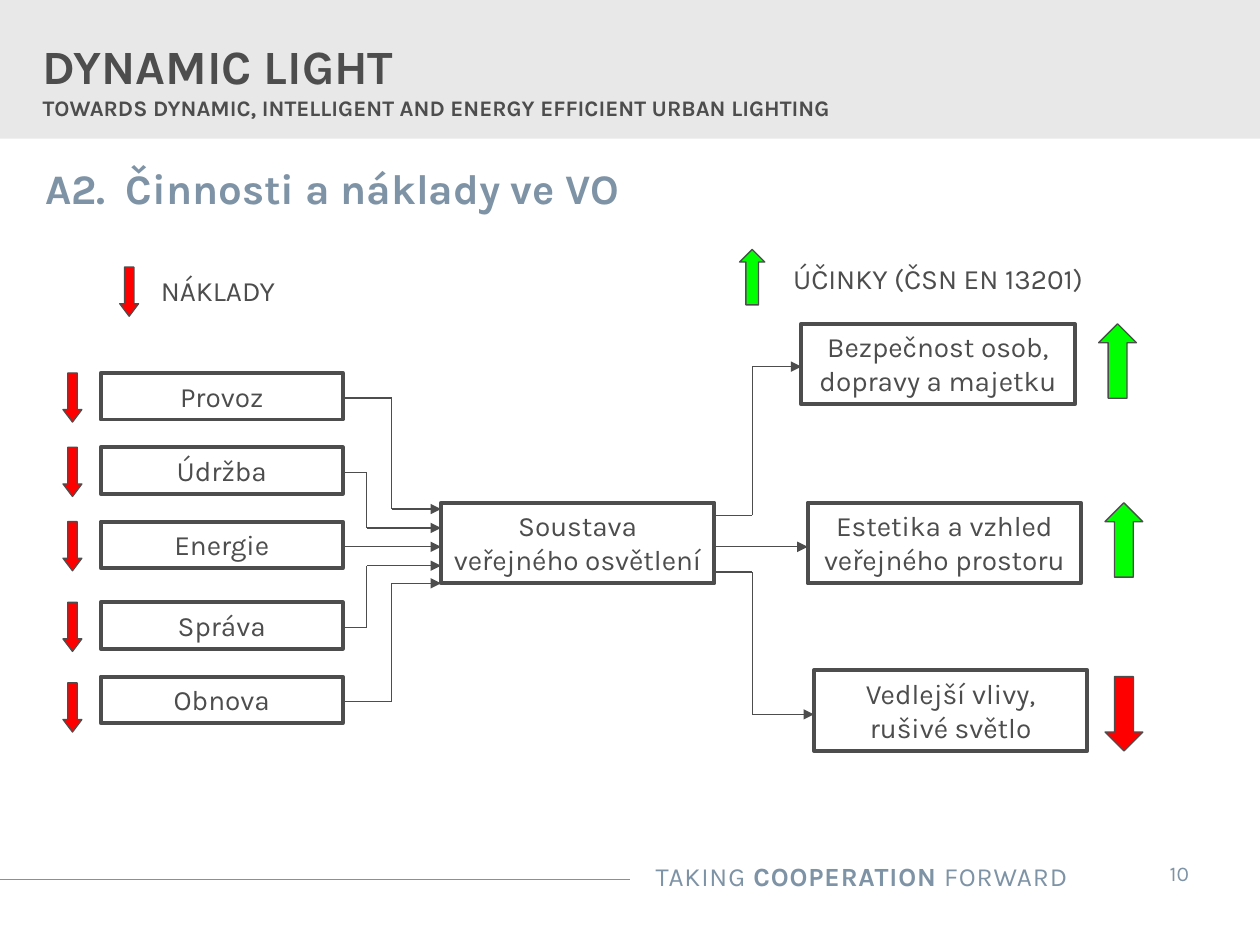
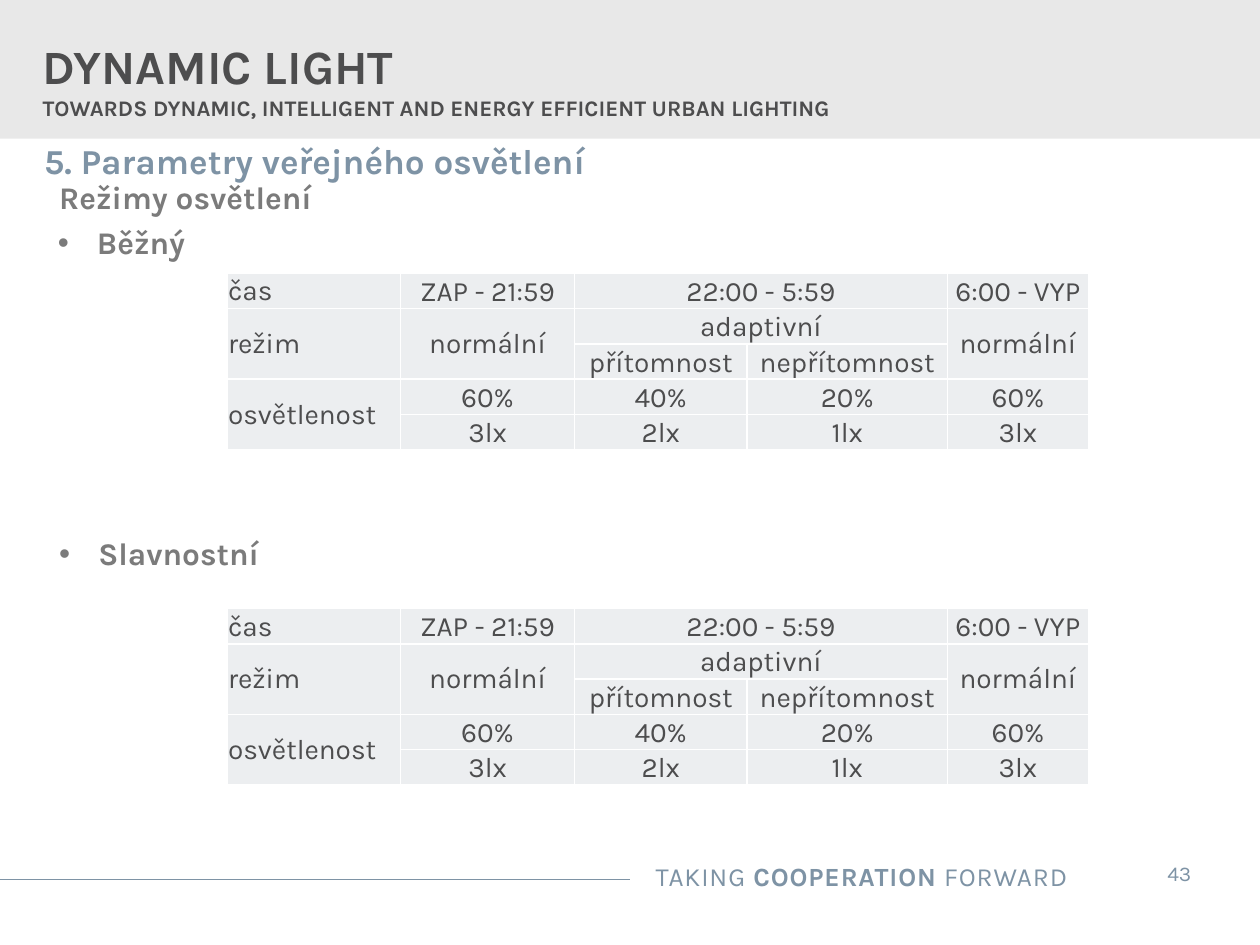
from dataclasses import dataclass
from typing import Optional

from lxml.etree import SubElement
from pptx import Presentation
from pptx.dml.color import RGBColor
from pptx.enum.shapes import MSO_CONNECTOR as Connector, MSO_SHAPE as Shape
from pptx.enum.text import MSO_ANCHOR as Anchor, PP_ALIGN as Align
from pptx.oxml.ns import qn
from pptx.util import Emu, Pt

PX = 9144
FONT = "Karla"
COLORS = {
    "band": "E8E8E8",
    "ink": "4D4D4E",
    "accent": "7E93A5",
    "muted": "7B7B7B",
    "cell": "ECEEF0",
    "white": "FFFFFF",
    "cost": "FF0000",
    "effect": "00FF00",
}


@dataclass(frozen=True)
class Area:
    """A rectangle in px."""
    left: int
    top: int
    width: int
    height: int

    def emu(self) -> tuple:
        """Give the rectangle in EMU."""
        return tuple(Emu(n * PX) for n in (self.left, self.top, self.width, self.height))


@dataclass(frozen=True)
class Span:
    """A run of text with its look."""
    text: str
    size: float = 16
    color: str = "ink"
    bold: bool = False
    spacing: int = 0


@dataclass(frozen=True)
class Marker:
    """A block arrow that shows a rise or a fall."""
    area: Area
    rising: bool
    head: float = 0.5


@dataclass(frozen=True)
class Cost:
    """A cost box with its marker and its route into the system."""
    name: str
    top: int
    marker_top: int
    bus: Optional[int]
    entry: int


@dataclass(frozen=True)
class Effect:
    """An effect box with its marker and its route out of the system."""
    name: str
    left: int
    top: int
    exit: int
    entry: int
    marker: Marker


@dataclass(frozen=True)
class Heading:
    """A heading line on the table page."""
    area: Area
    span: Span
    bullet: bool = False


@dataclass(frozen=True)
class TableCell:
    """A table cell with its text and the rows and columns it covers."""
    row: int
    column: int
    text: str
    rows: int = 1
    columns: int = 1


COST_LEFT, COST_WIDTH, COST_HEIGHT = 80, 192, 37
BLOCK_WIDTH, BLOCK_HEIGHT = 217, 64
SYSTEM = Area(350, 399, BLOCK_WIDTH, BLOCK_HEIGHT)
EFFECT_BUS = 597
COSTS = (
    Cost("Provoz", 296, 296, 311, 404),
    Cost("Údržba", 355, 355, 291, 419),
    Cost("Energie", 414, 414, None, 434),
    Cost("Správa", 478, 478, 291, 449),
    Cost("Obnova", 537, 542, 311, 463),
)
EFFECTS = (
    Effect("Bezpečnost osob, dopravy a majetku", 636, 257, 409, 291,
           Marker(Area(872, 257, 30, 59), True)),
    Effect("Estetika a vzhled veřejného prostoru", 641, 399, 434, 434,
           Marker(Area(877, 399, 30, 59), True)),
    Effect("Vedlejší vlivy, rušivé světlo", 646, 532, 454, 567,
           Marker(Area(877, 537, 30, 59), False)),
)
LEGEND = (
    ("NÁKLADY", Area(77, 212, 192, 37), Marker(Area(95, 212, 15, 39), False, 0.665)),
    ("ÚČINKY (ČSN EN 13201)", Area(597, 203, 295, 37), Marker(Area(587, 198, 20, 44), True)),
)
HEADINGS = (
    Heading(Area(35, 114, 591, 30),
            Span("5. Parametry veřejného osvětlení", 20, "accent", True)),
    Heading(Area(47, 143, 591, 30), Span("Režimy osvětlení", 18, "muted", True)),
    Heading(Area(46, 179, 591, 30), Span("Běžný", 18, "muted", True), True),
    Heading(Area(47, 426, 591, 30), Span("Slavnostní", 18, "muted", True), True),
)
TABLE_TOPS = (217, 483)
COLUMN_WIDTHS = (138, 138, 137, 159, 112)
ROW_HEIGHT, ROW_COUNT = 28, 5
CELLS = (
    TableCell(0, 0, "čas"),
    TableCell(0, 1, "ZAP - 21:59"),
    TableCell(0, 2, "22:00 - 5:59", columns=2),
    TableCell(0, 4, "6:00 - VYP"),
    TableCell(1, 0, "režim", rows=2),
    TableCell(1, 1, "normální", rows=2),
    TableCell(1, 2, "adaptivní", columns=2),
    TableCell(1, 4, "normální", rows=2),
    TableCell(2, 2, "přítomnost"),
    TableCell(2, 3, "nepřítomnost"),
    TableCell(3, 0, "osvětlenost", rows=2),
    *(TableCell(3, n, text) for n, text in enumerate(("60%", "40%", "20%", "60%"), 1)),
    *(TableCell(4, n, text) for n, text in enumerate(("3lx", "2lx", "1lx", "3lx"), 1)),
)


def rgb(name: str) -> RGBColor:
    """Look up a named colour."""
    return RGBColor.from_string(COLORS[name])


def add_span(para, item: Span) -> None:
    """Add one run to a paragraph."""
    span = para.add_run()
    span.text = item.text
    span.font.name = FONT
    span.font.size = Pt(item.size)
    span.font.bold = item.bold
    span.font.color.rgb = rgb(item.color)
    if item.spacing:
        span._r.get_or_add_rPr().set("spc", str(item.spacing))


def set_frame(frame, sides: int = 10, ends: int = 5, wrap: bool = True) -> None:
    """Set the insets, wrapping and top anchor of a text frame."""
    frame.margin_left = frame.margin_right = Emu(sides * PX)
    frame.margin_top = frame.margin_bottom = Emu(ends * PX)
    frame.word_wrap = wrap
    frame.vertical_anchor = Anchor.TOP


def set_indent(para, margin: int, first: int = 0) -> None:
    """Set the left margin and first-line indent of a paragraph."""
    props = para._p.get_or_add_pPr()
    props.set("marL", str(margin * PX))
    props.set("indent", str(first * PX))


def add_text(page, area: Area, spans: tuple, align=Align.LEFT, sides: int = 10,
             ends: int = 5, wrap: bool = True):
    """Add a text box of one paragraph and return its frame."""
    frame = page.shapes.add_textbox(*area.emu()).text_frame
    set_frame(frame, sides, ends, wrap)
    para = frame.paragraphs[0]
    para.alignment = align
    for item in spans:
        add_span(para, item)
    return frame


def add_line(page, start: tuple, end: tuple, color: str = "ink", arrow: bool = False) -> None:
    """Draw a thin straight line, with an arrowhead at its end if wanted."""
    line = page.shapes.add_connector(
        Connector.STRAIGHT, *(Emu(n * PX) for n in (*start, *end)))
    line.line.color.rgb = rgb(color)
    line.line.width = Pt(0.75)
    if arrow:
        SubElement(line.line._get_or_add_ln(), qn("a:tailEnd"), type="triangle")
    SubElement(line._element.spPr, qn("a:effectLst"))


def add_route(page, *points: tuple) -> None:
    """Draw a chain of lines that ends in an arrowhead."""
    last = len(points) - 2
    for n, (start, end) in enumerate(zip(points, points[1:])):
        add_line(page, start, end, arrow=n == last)


def add_block(page, area: Area, text: str) -> None:
    """Draw an outlined box with centred text."""
    box = page.shapes.add_shape(Shape.RECTANGLE, *area.emu())
    box.shadow.inherit = False
    box.fill.background()
    box.line.color.rgb = rgb("ink")
    box.line.width = Pt(2.25)
    set_frame(box.text_frame)
    para = box.text_frame.paragraphs[0]
    para.alignment = Align.CENTER
    add_span(para, Span(text))


def add_marker(page, marker: Marker) -> None:
    """Draw a green rising or red falling block arrow."""
    arrow = page.shapes.add_shape(Shape.UP_ARROW, *marker.area.emu())
    arrow.shadow.inherit = False
    arrow.adjustments[0] = 0.5
    arrow.adjustments[1] = marker.head
    arrow.rotation = 0 if marker.rising else 180
    arrow.fill.solid()
    arrow.fill.fore_color.rgb = rgb("effect" if marker.rising else "cost")
    arrow.line.color.rgb = rgb("ink")
    arrow.line.width = Pt(0.75)


def add_page(deck, number: int):
    """Add a page with the shared band, title and footer."""
    page = deck.slides.add_slide(deck.slide_layouts[6])
    add_line(page, (0, 698), (500, 698), "accent")
    band = page.shapes.add_shape(Shape.RECTANGLE, *Area(0, 0, 1000, 110).emu())
    band.shadow.inherit = False
    band.fill.solid()
    band.fill.fore_color.rgb = rgb("band")
    band.line.fill.background()
    add_text(page, Area(388, 678, 469, 35), (
        Span("TAKING ", 15, "accent", spacing=50),
        Span("COOPERATION", 15, "accent", True, 50),
        Span(" FORWARD", 15, "accent", spacing=50),
    ), Align.RIGHT)
    add_text(page, Area(899, 673, 74, 40), (Span(str(number), 12, "accent"),),
             Align.CENTER, sides=20, ends=10, wrap=False)
    title = add_text(page, Area(0, 24, 722, 75), (Span("DYNAMIC LIGHT", 27.3, bold=True),))
    para = title.paragraphs[0]
    set_indent(para, 24)
    para.add_line_break()
    add_span(para, Span("TOWARDS DYNAMIC, INTELLIGENT AND ENERGY EFFICIENT URBAN LIGHTING",
                        12.7, bold=True))
    return page


def add_heading(page, heading: Heading) -> None:
    """Add a heading line in a plain outline, bulleted if wanted."""
    area = heading.area
    right, bottom = area.left + area.width, area.top + area.height
    outline = page.shapes.build_freeform(area.left, area.top, scale=PX)
    outline.add_line_segments(((right, area.top), (right, bottom), (area.left, bottom)))
    box = outline.convert_to_shape()
    box.shadow.inherit = False
    box.fill.background()
    box.line.fill.background()
    set_frame(box.text_frame, sides=0, ends=0)
    box.text_frame.vertical_anchor = Anchor.MIDDLE
    para = box.text_frame.paragraphs[0]
    para.alignment = Align.LEFT
    if heading.bullet:
        set_indent(para, 31, -31)
        props = para._p.get_or_add_pPr()
        SubElement(props, qn("a:buFont"), typeface="Arial")
        SubElement(props, qn("a:buChar"), char="•")
    para.line_spacing = 0.91
    add_span(para, heading.span)


def style_cell(cell) -> None:
    """Give a cell its white borders, fill and insets."""
    props = cell._tc.get_or_add_tcPr()
    for side in ("a:lnL", "a:lnR", "a:lnT", "a:lnB"):
        border = SubElement(props, qn(side), w=str(Pt(1)))
        fill = SubElement(border, qn("a:solidFill"))
        SubElement(fill, qn("a:srgbClr"), val=COLORS["white"])
    cell.fill.solid()
    cell.fill.fore_color.rgb = rgb("cell")
    cell.margin_left = cell.margin_right = cell.margin_top = Emu(PX)
    cell.margin_bottom = Emu(0)


def add_modes_table(page, top: int) -> None:
    """Add the table of lighting modes by time."""
    area = Area(180, top, sum(COLUMN_WIDTHS), ROW_COUNT * ROW_HEIGHT)
    table = page.shapes.add_table(ROW_COUNT, len(COLUMN_WIDTHS), *area.emu()).table
    table.first_row = table.horz_banding = False
    for column, width in zip(table.columns, COLUMN_WIDTHS):
        column.width = Emu(width * PX)
    for cell in table.iter_cells():
        style_cell(cell)
    for item in CELLS:
        cell = table.cell(item.row, item.column)
        if item.rows > 1 or item.columns > 1:
            cell.merge(table.cell(item.row + item.rows - 1, item.column + item.columns - 1))
        middle = item.rows > 1 or item.column == 0
        cell.vertical_anchor = Anchor.MIDDLE if middle else Anchor.BOTTOM
        para = cell.text_frame.paragraphs[0]
        para.alignment = Align.CENTER if item.column else Align.LEFT
        add_span(para, Span(item.text))


def build_costs_page(deck) -> None:
    """Build the diagram of costs and effects."""
    page = add_page(deck, 10)
    title = add_text(page, Area(26, 124, 906, 51),
                     (Span("A2.\tČinnosti a náklady ve VO", 24, "accent", True),))
    tabs = SubElement(title.paragraphs[0]._p.get_or_add_pPr(), qn("a:tabLst"))
    SubElement(tabs, qn("a:tab"), pos=str(64 * PX), algn="l")
    add_block(page, SYSTEM, "Soustava veřejného osvětlení")
    for cost in COSTS:
        add_block(page, Area(COST_LEFT, cost.top, COST_WIDTH, COST_HEIGHT), cost.name)
        add_marker(page, Marker(Area(50, cost.marker_top, 15, 39), False, 0.665))
        middle = cost.top + 20
        bends = ((cost.bus, middle), (cost.bus, cost.entry)) if cost.bus else ()
        add_route(page, (COST_LEFT + COST_WIDTH, middle), *bends, (SYSTEM.left, cost.entry))
    for effect in EFFECTS:
        add_block(page, Area(effect.left, effect.top, BLOCK_WIDTH, BLOCK_HEIGHT), effect.name)
        add_marker(page, effect.marker)
        straight = effect.exit == effect.entry
        bends = () if straight else ((EFFECT_BUS, effect.exit), (EFFECT_BUS, effect.entry))
        add_route(page, (SYSTEM.left + SYSTEM.width, effect.exit), *bends,
                  (effect.left, effect.entry))
    for text, area, marker in LEGEND:
        add_text(page, area, (Span(text),), Align.CENTER)
        add_marker(page, marker)


def build_modes_page(deck) -> None:
    """Build the page of lighting modes."""
    page = add_page(deck, 43)
    for top in TABLE_TOPS:
        add_modes_table(page, top)
    for heading in HEADINGS:
        add_heading(page, heading)


def main() -> None:
    """Build and save the deck."""
    deck = Presentation()
    deck.slide_width, deck.slide_height = Emu(1000 * PX), Emu(750 * PX)
    build_costs_page(deck)
    build_modes_page(deck)
    deck.save("out.pptx")


if __name__ == "__main__":
    main()
